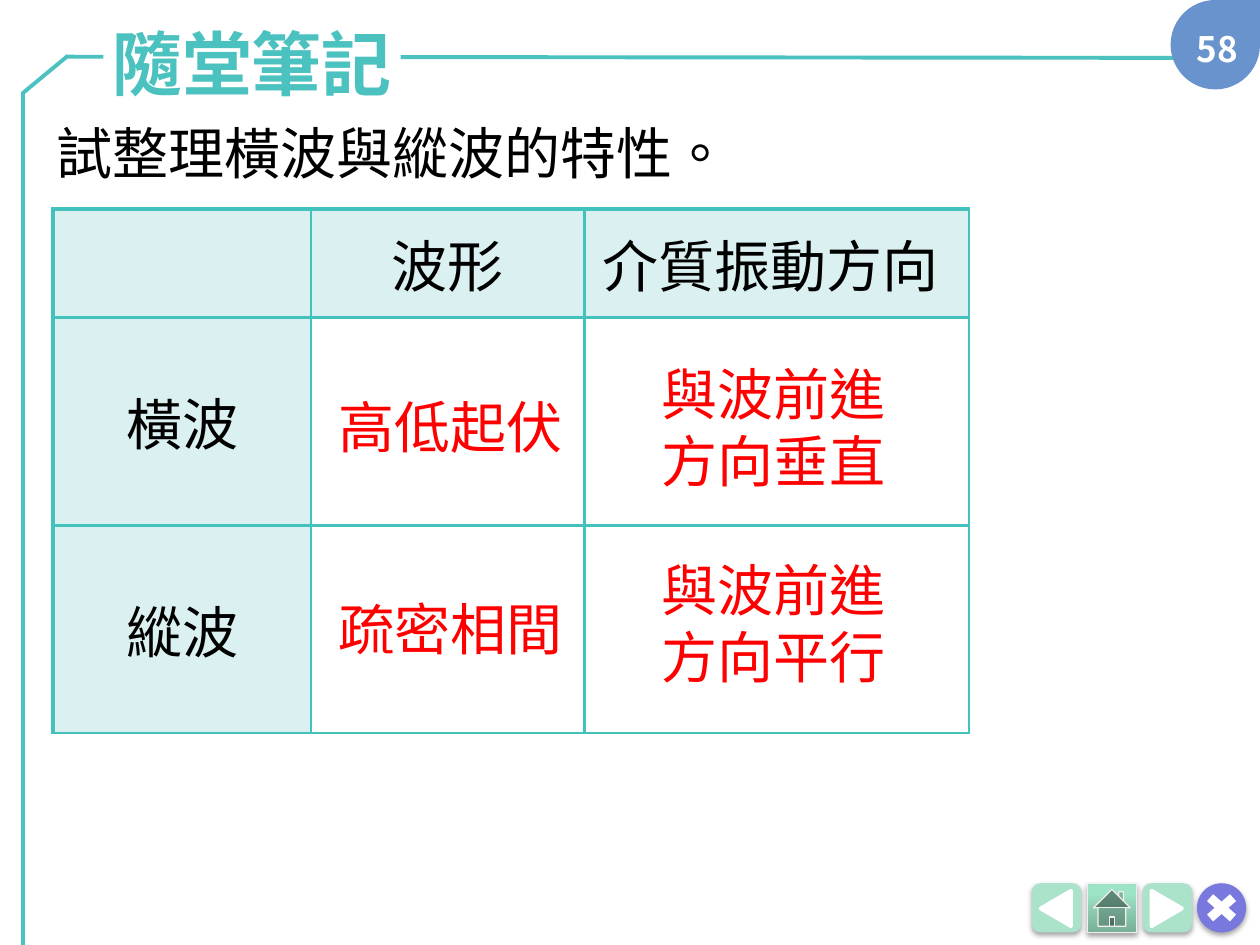
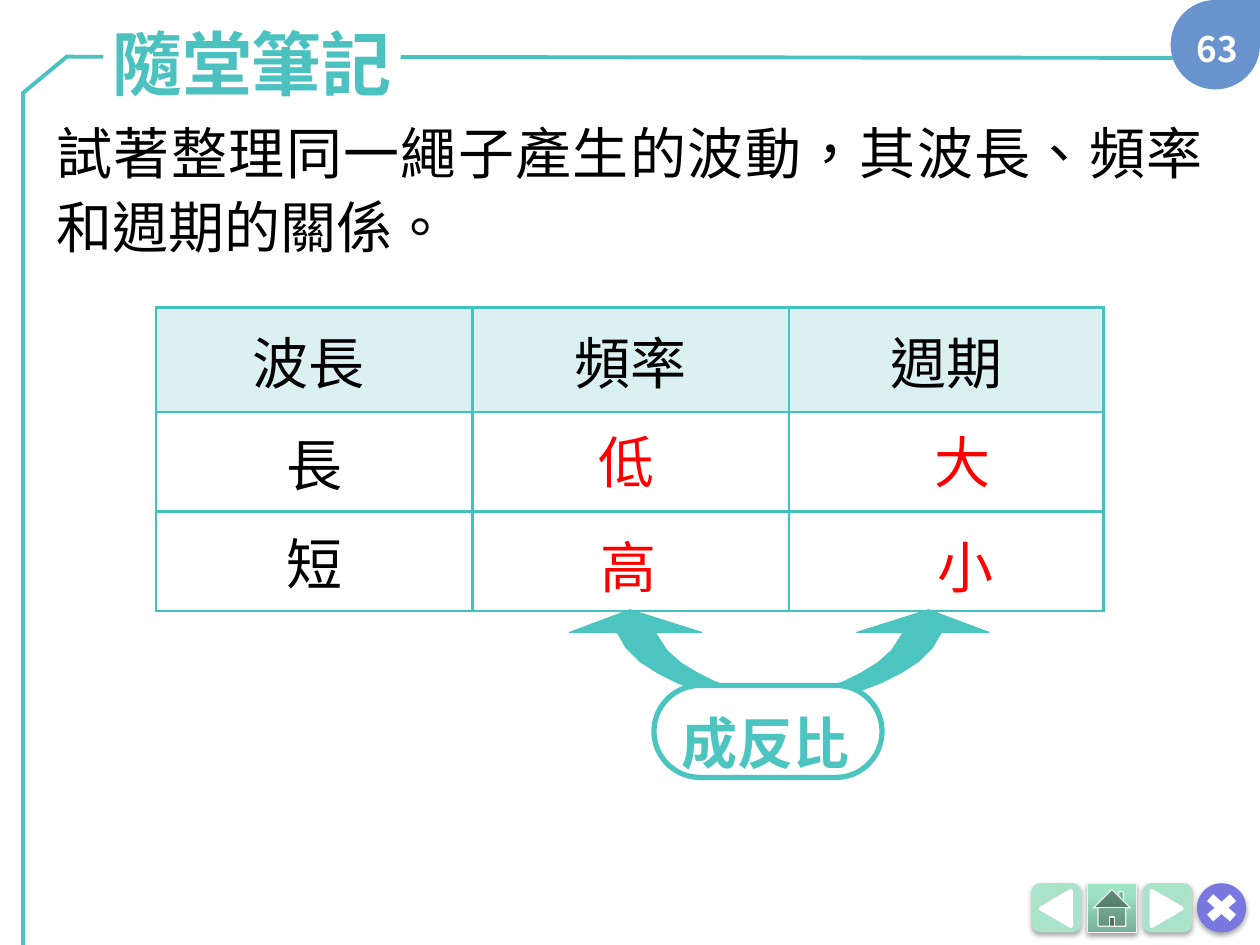
import lxml.etree
import pptx
import pptx.dml.color
import pptx.enum.shapes
import pptx.enum.text
import pptx.oxml
import pptx.oxml.ns
import pptx.util

Inches = pptx.util.Inches
Pt = pptx.util.Pt
RGBColor = pptx.dml.color.RGBColor
SHAPE = pptx.enum.shapes.MSO_SHAPE
ALIGN = pptx.enum.text.PP_ALIGN
ANCHOR = pptx.enum.text.MSO_ANCHOR
qn = pptx.oxml.ns.qn

FONT = "Noto Sans CJK SC"
TEAL = RGBColor(0x4B, 0xC2, 0xBF)
ARROW_TEAL = RGBColor(0x4C, 0xC4, 0xC0)
BORDER_TEAL = RGBColor(0x43, 0xC1, 0xBD)
PALE_TEAL = RGBColor(0xDB, 0xF0, 0xF0)
MINT = RGBColor(0xAA, 0xE2, 0xCA)
HOME_DARK = RGBColor(0x79, 0xAF, 0x98)
HOME_LIGHT = RGBColor(0x9D, 0xE3, 0xC5)
HOME_EDGE = RGBColor(0xEF, 0xEF, 0xEF)
VIOLET = RGBColor(0x78, 0x78, 0xDE)
BLUE = RGBColor(0x69, 0x93, 0xCC)
RED = RGBColor(0xFF, 0x00, 0x00)
BLACK = RGBColor(0x00, 0x00, 0x00)
WHITE = RGBColor(0xFF, 0xFF, 0xFF)


def write_text(frame, text, size=32, color=BLACK, bold=False, align=ALIGN.LEFT,
               spacing=None, wrap=True, anchor=ANCHOR.TOP):
    frame.word_wrap = wrap
    frame.vertical_anchor = anchor
    paragraph = frame.paragraphs[0]
    paragraph.alignment = align
    paragraph.line_spacing = spacing
    run = paragraph.add_run()
    run.text = text
    run.font.size = Pt(size)
    run.font.bold = bold
    run.font.color.rgb = color
    run.font.name = FONT
    run.font._element.set("lang", "zh-TW")
    east_asian = lxml.etree.SubElement(run.font._element, qn("a:ea"))
    east_asian.set("typeface", FONT)


def draw(slide, kind, box, fill, line=None, width=0.75, rotation=0, shadow=False):
    """Add a filled preset shape, optionally outlined, turned or with a soft shadow."""
    shape = slide.shapes.add_shape(kind, *map(Inches, box))
    shape.rotation = rotation
    shape.fill.solid()
    shape.fill.fore_color.rgb = fill
    if line is None:
        shape.line.fill.background()
    else:
        shape.line.color.rgb = line
        shape.line.width = Pt(width)
    shape.shadow.inherit = False
    if shadow:
        shape._element.spPr.find(qn("a:effectLst")).append(pptx.oxml.parse_xml(
            '<a:outerShdw xmlns:a="http://schemas.openxmlformats.org/drawingml/2006/main" '
            'blurRad="39370" dist="21600" dir="5400000" rotWithShape="0">'
            '<a:srgbClr val="000000"><a:alpha val="37000"/></a:srgbClr></a:outerShdw>'))
    return shape


HEADING = "隨堂筆記"
FRAME_LINES = [(0.52, 0.45, 9.85, 0.46), (0.53, 0.45, 0.18, 0.74), (0.18, 0.73, 0.18, 7.5)]
BUTTON_TOP, BUTTON_SIZE = 7.01, 0.39

# Answers are (text, left, top, width, height, alignment).
NOTES = [
    {
        "page": "58",
        "task": "試整理橫波與縱波的特性。",
        "origin": (0.42, 1.66),
        "columns": [2.05, 2.17, 3.05],
        "rows": [0.86, 1.65, 1.65],
        "cells": [["", "波形", "介質振動方向 "], ["橫波", "", ""], ["縱波", "", ""]],
        "shaded_first_column": True,
        "thick_edge": ("a:lnL", 0),
        "answers": [
            ("疏密相間", 2.49, 4.67, 2.18, 0.64, ALIGN.CENTER),
            ("與波前進方向平行", 5.15, 4.36, 2.18, 1.18, ALIGN.LEFT),
            ("高低起伏", 2.49, 3.07, 2.18, 0.64, ALIGN.CENTER),
            ("與波前進方向垂直", 5.15, 2.8, 2.18, 1.18, ALIGN.LEFT),
        ],
    },
    {
        "page": "63",
        "task": "試著整理同一繩子產生的波動，其波長、頻率和週期的關係。",
        "origin": (1.24, 2.44),
        "columns": [2.51, 2.51, 2.5],
        "rows": [0.83, 0.79, 0.79],
        "cells": [["波長 ", "頻率", "週期"], ["長", "", ""], ["短", "", ""]],
        "shaded_first_column": False,
        "thick_edge": ("a:lnR", 2),
        "answers": [
            ("低", 4.65, 3.34, 0.68, 0.64, ALIGN.LEFT),
            ("高", 4.67, 4.18, 0.68, 0.64, ALIGN.LEFT),
            ("大", 7.32, 3.34, 0.7, 0.64, ALIGN.LEFT),
            ("小", 7.34, 4.18, 0.69, 0.64, ALIGN.LEFT),
        ],
    },
]

deck = pptx.Presentation()
deck.slide_width = Inches(10)
deck.slide_height = Inches(7.5)

for note in NOTES:
    slide = deck.slides.add_slide(deck.slide_layouts[6])

    # Frame and heading
    for ends in FRAME_LINES:
        rule = slide.shapes.add_connector(
            pptx.enum.shapes.MSO_CONNECTOR.STRAIGHT, *map(Inches, ends))
        rule.line.color.rgb = TEAL
        rule.line.width = Pt(2.25)
        lxml.etree.SubElement(rule._element.spPr, qn("a:effectLst"))
    heading = draw(slide, SHAPE.RECTANGLE, (0.82, 0.16, 2.36, 0.67), WHITE).text_frame
    heading.margin_left = heading.margin_right = heading.margin_top = heading.margin_bottom = 0
    write_text(heading, HEADING, size=40, color=TEAL, bold=True,
               align=ALIGN.CENTER, anchor=ANCHOR.MIDDLE)

    # Navigation buttons
    for left, turn in ((8.19, 270), (9.07, 90)):
        draw(slide, SHAPE.ROUNDED_RECTANGLE, (left, BUTTON_TOP, BUTTON_SIZE, BUTTON_SIZE),
             MINT, shadow=True)
        draw(slide, SHAPE.ISOSCELES_TRIANGLE, (left + 0.05, 7.09, 0.28, 0.24),
             WHITE, line=WHITE, width=2.25, rotation=turn)
    draw(slide, SHAPE.OVAL, (9.5, BUTTON_TOP, BUTTON_SIZE, BUTTON_SIZE), VIOLET, shadow=True)
    draw(slide, SHAPE.MATH_MULTIPLY, (9.52, 7.05, 0.35, 0.31), WHITE)
    home = draw(slide, SHAPE.ACTION_BUTTON_HOME, (8.63, BUTTON_TOP, BUTTON_SIZE, BUTTON_SIZE),
                HOME_LIGHT, line=HOME_EDGE, shadow=True)
    home.fill.gradient()
    home.fill.gradient_angle = 90
    for stop, color, position in zip(home.fill.gradient_stops, (HOME_DARK, HOME_LIGHT), (0, 0.8)):
        stop.color.rgb = color
        stop.position = position

    # Page number and task
    draw(slide, SHAPE.TEAR, (9.29, 0, 0.71, 0.71), BLUE)
    page = slide.shapes.add_textbox(*map(Inches, (9.32, 0.11, 0.68, 0.48)))
    write_text(page.text_frame, note["page"], size=20, color=WHITE, bold=True,
               align=ALIGN.CENTER, spacing=Pt(28), wrap=False)
    task = slide.shapes.add_textbox(*map(Inches, (0.35, 0.84, 9.3, 1.71)))
    write_text(task.text_frame, note["task"], align=ALIGN.JUSTIFY, spacing=1.1)

    # Summary table
    columns, rows = note["columns"], note["rows"]
    summary = slide.shapes.add_table(
        len(rows), len(columns), *map(Inches, (*note["origin"], sum(columns), sum(rows)))).table
    for column, width in zip(summary.columns, columns):
        column.width = Inches(width)
    for row, height in zip(summary.rows, rows):
        row.height = Inches(height)
    for r, texts in enumerate(note["cells"]):
        for c, text in enumerate(texts):
            cell = summary.cell(r, c)
            shaded = r == 0 or (c == 0 and note["shaded_first_column"])
            cell.vertical_anchor = ANCHOR.MIDDLE
            if text:
                write_text(cell.text_frame, text, align=ALIGN.CENTER, anchor=None, wrap=None)
            properties = cell._tc.get_or_add_tcPr()
            for edge in ("a:lnL", "a:lnR", "a:lnT", "a:lnB"):
                thick = (edge, c) == note["thick_edge"] or (edge, r) == ("a:lnT", 0)
                border = lxml.etree.SubElement(properties, qn(edge), w=str(Pt(2.25 if thick else 1.5)))
                paint = lxml.etree.SubElement(border, qn("a:solidFill"))
                lxml.etree.SubElement(paint, qn("a:srgbClr"), val=str(BORDER_TEAL))
            cell.fill.solid()
            cell.fill.fore_color.rgb = PALE_TEAL if shaded else WHITE

    for text, left, top, width, height, align in note["answers"]:
        answer = slide.shapes.add_textbox(*map(Inches, (left, top, width, height)))
        write_text(answer.text_frame, text, color=RED, align=align)

# Inverse-proportion arrows on the last slide, in hundredths of an inch:
# the left half is mirrored about the middle
MIRROR_SUM = 452 + 785
inner_half = [(452, 502), (500, 484), (557, 502), (520, 502), (529, 516), (540, 526),
              (553, 534), (567, 541), (584, 547), (607, 553)]
outer_half = [(609, 557), (590, 555), (570, 552), (554, 548), (538, 542), (522, 534),
              (508, 525), (497, 514), (490, 502)]
inner_mirror, outer_mirror = [
    [(MIRROR_SUM - x, y) for x, y in reversed(half)] for half in (inner_half, outer_half)]
outline = inner_half + inner_mirror + outer_mirror + outer_half
builder = slide.shapes.build_freeform(*outline[0], scale=Inches(0.01))
builder.add_line_segments(outline[1:], close=True)
arrows = builder.convert_to_shape()
arrows.fill.solid()
arrows.fill.fore_color.rgb = ARROW_TEAL
arrows.line.color.rgb = ARROW_TEAL
arrows.line.width = Pt(0.75)
arrows.shadow.inherit = False

pill = draw(slide, SHAPE.ROUNDED_RECTANGLE, (5.19, 5.44, 1.81, 0.73), WHITE,
            line=ARROW_TEAL, width=3)
pill.adjustments[0] = 0.5
relation = slide.shapes.add_textbox(*map(Inches, (5.31, 5.47, 1.68, 0.69)))
write_text(relation.text_frame, "成反比", color=ARROW_TEAL, bold=True, spacing=1.2)

deck.save("out.pptx")
